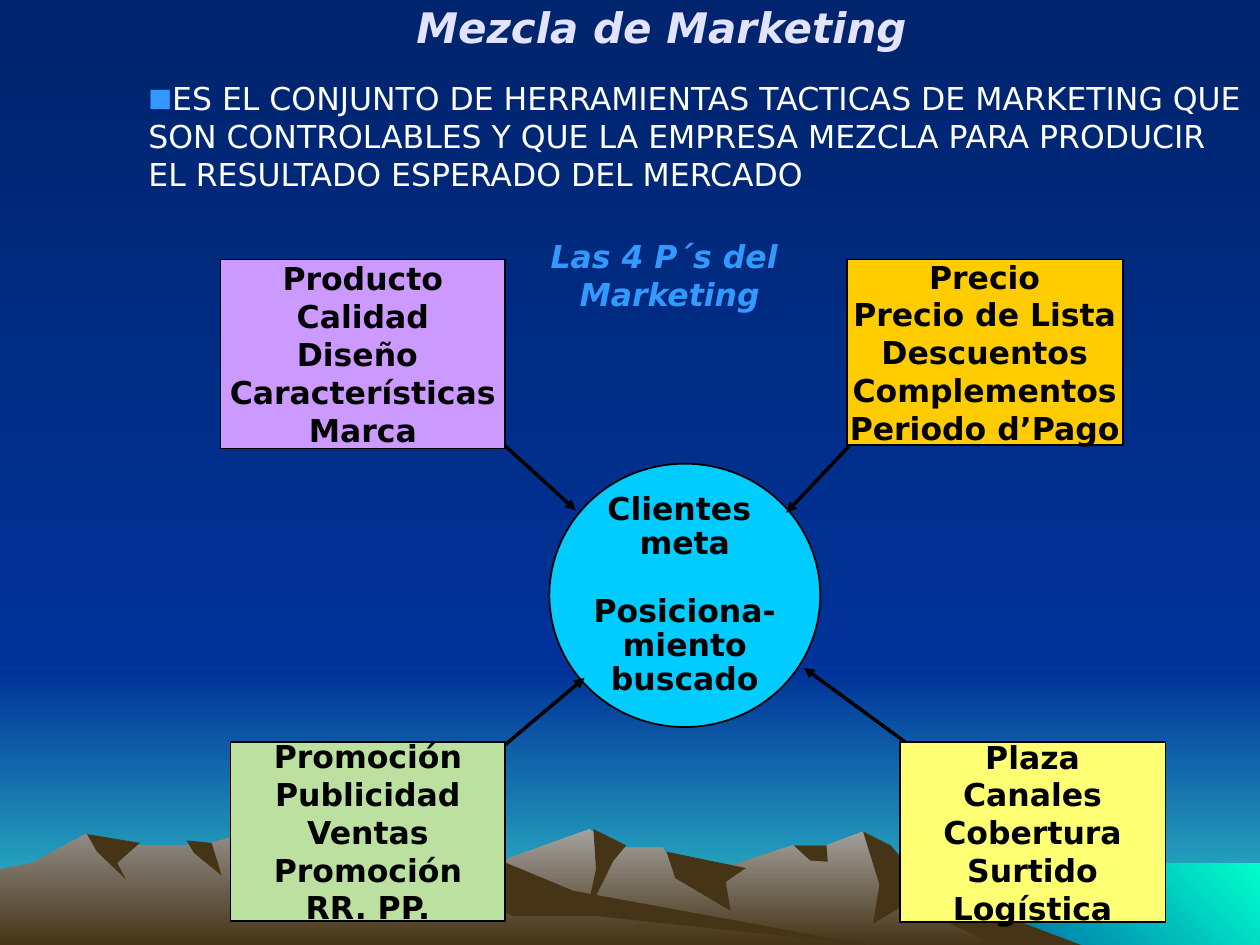
from pptx import Presentation
from pptx.dml.color import RGBColor
from pptx.enum.shapes import MSO_CONNECTOR, MSO_SHAPE
from pptx.enum.text import MSO_ANCHOR, PP_ALIGN
from pptx.oxml.ns import qn
from pptx.util import Inches, Pt
from lxml.etree import SubElement

FONT = "DejaVu Sans"
COLORS = {
    "night": "00246D", "blue": "003399", "horizon": "33CCCC", "water": "00FFCC",
    "rock": "A5A29F", "far_rock": "938F8B", "shade": "463416",
    "title": "E3E3FF", "white": "FFFFFF", "accent": "3399FF", "black": "000000",
    "circle": "00CCFF", "product": "CC99FF", "price": "FFCC00",
    "promotion": "BBE0A0", "place": "FEFF72",
}

# Mountain outlines: fill colours, then points in inches
MOUNTAINS = [
    (("rock", "shade"),
     [(8.2, 7.5), (7.23, 6.98), (6.85, 6.6), (6.56, 6.71), (6.29, 6.71), (5.66, 6.92),
      (5.36, 6.9), (5.26, 6.73), (4.86, 6.73), (4.68, 6.58), (3.94, 6.85), (2.58, 7.5)]),
    (("shade",),
     [(6.85, 6.6), (6.98, 7.02), (6.93, 7.33), (7.2, 7.17), (7.9, 7.5), (8.58, 7.5),
      (7.34, 7.03), (7.07, 6.71)]),
    (("shade",),
     [(4.71, 6.58), (4.73, 6.9), (4.65, 7.27), (4.87, 6.83), (4.97, 6.71)]),
    (("shade",),
     [(5.29, 6.76), (5.36, 6.97), (5.8, 7.23), (5.76, 7), (5.92, 6.89)]),
    (("shade",), [(6.3, 6.71), (6.43, 6.83), (6.57, 6.84), (6.56, 6.71)]),
    (("far_rock", "shade"),
     [(6.9, 7.5), (4.32, 7.12), (3.54, 6.65), (2.6, 6.76), (2.08, 6.58), (1.6, 6.71),
      (0.94, 6.71), (0.68, 6.62), (0.26, 6.85), (0, 6.9), (0, 7.5)]),
    (("shade",),
     [(3.54, 6.65), (3.74, 7.12), (4.07, 7.27), (4.72, 7.27), (6.9, 7.5), (4.55, 7.07)]),
    (("shade",), [(1.48, 6.67), (1.68, 6.69), (1.76, 6.95), (1.54, 6.77)]),
    (("shade",),
     [(0.69, 6.62), (1.11, 6.69), (0.93, 6.85), (1, 6.98), (0.77, 6.76)]),
]

# Box colour, position and size, lines of text
BOXES = [
    ("product", (1.75, 2.06, 2.26, 1.5),
     ["Producto", "Calidad", "Diseño ", "Características", "Marca"]),
    ("price", (6.72, 2.06, 2.19, 1.47),
     ["Precio", "Precio de Lista", "Descuentos", "Complementos", "Periodo d’Pago"]),
    ("promotion", (1.83, 5.89, 2.18, 1.42),
     ["Promoción", "Publicidad", "Ventas", "Promoción", "RR. PP."]),
    ("place", (7.14, 5.89, 2.11, 1.43),
     ["Plaza", "Canales", "Cobertura", "Surtido", "Logística"]),
]
ARROWS = [(7.39, 6.04, 6.38, 5.3), (4.01, 5.91, 4.64, 5.38),
          (6.74, 3.54, 6.24, 4.07), (4.01, 3.54, 4.57, 4.05)]


def color(name):
    return RGBColor.from_string(COLORS[name])


def paint(fill, names, angle=270):
    """Fill with one colour, or with a gradient between two."""
    if len(names) == 1:
        fill.solid()
        fill.fore_color.rgb = color(names[0])
        return
    fill.gradient()
    fill.gradient_angle = angle
    for position, (stop, name) in enumerate(zip(fill.gradient_stops, names)):
        stop.position = position
        stop.color.rgb = color(name)


def write(frame, lines, size=18, ink="black", bold=True, italic=False, wrap=False,
          align=PP_ALIGN.CENTER, anchor=MSO_ANCHOR.MIDDLE, spacing=None):
    frame.word_wrap = wrap
    frame.vertical_anchor = anchor
    for index, line in enumerate(lines):
        para = frame.paragraphs[0] if index == 0 else frame.add_paragraph()
        para.alignment = align
        para.line_spacing = spacing
        span = para.add_run()
        span.text = line
        span.font.name, span.font.size = FONT, Pt(size)
        span.font.bold, span.font.italic = bold, italic
        span.font.color.rgb = color(ink)
    return frame


class SlideBuilder:
    def __init__(self, page):
        self.page = page
        self.shapes = page.shapes

    def finish(self, shape, names, angle=270, outlined=False):
        shape.shadow.inherit = False
        paint(shape.fill, names, angle)
        if outlined:
            shape.line.color.rgb = color("black")
            shape.line.width = Pt(1)
        else:
            shape.line.fill.background()
        return shape

    def preset(self, kind, place, *names, **style):
        shape = self.shapes.add_shape(kind, *map(Inches, place))
        return self.finish(shape, names, **style)

    def outline(self, names, points):
        points = [(Inches(x), Inches(y)) for x, y in points]
        builder = self.shapes.build_freeform(*points[0])
        builder.add_line_segments(points[1:], close=True)
        return self.finish(builder.convert_to_shape(), names)

    def panel(self, kind, place, name, lines, **style):
        shape = self.preset(kind, place, name, outlined=True)
        return write(shape.text_frame, lines, **style)

    def text(self, place, lines, **style):
        box = self.shapes.add_textbox(*map(Inches, place))
        return write(box.text_frame, lines, **style)

    def bullet(self, para, symbol, ink):
        properties = para._p.get_or_add_pPr()
        properties.set("marL", "0")
        properties.set("indent", "0")
        tint = SubElement(properties, qn("a:buClr"))
        SubElement(tint, qn("a:srgbClr"), val=COLORS[ink])
        SubElement(properties, qn("a:buSzPct"), val="80000")
        SubElement(properties, qn("a:buFont"), typeface=FONT)
        SubElement(properties, qn("a:buChar"), char=symbol)

    def arrow(self, ends):
        arrow = self.shapes.add_connector(MSO_CONNECTOR.STRAIGHT, *map(Inches, ends))
        arrow.line.color.rgb = color("black")
        arrow.line.width = Pt(2)
        SubElement(arrow.line._get_or_add_ln(), qn("a:tailEnd"), type="triangle")
        SubElement(arrow._element.spPr, qn("a:effectLst"))


def main():
    deck = Presentation()
    deck.slide_width, deck.slide_height = Inches(10), Inches(7.5)
    slide = SlideBuilder(deck.slides.add_slide(deck.slide_layouts[6]))

    # Sky, water and mountains
    paint(slide.page.background.fill, ("night", "blue"))
    slide.preset(MSO_SHAPE.RECTANGLE, (0, 5.33, 10, 2.17), "blue", "horizon")
    slide.preset(MSO_SHAPE.RECTANGLE, (0, 0, 10, 5.33), "night", "blue")
    slide.preset(MSO_SHAPE.RECTANGLE, (6.83, 6.85, 3.17, 0.65), "blue", "water", angle=45)
    for names, points in MOUNTAINS:
        slide.outline(names, points)

    # Title, definition and subtitle
    slide.text((1, -0.25, 8.5, 0.92), ["Mezcla de Marketing"],
               size=24, ink="title", italic=True, wrap=True)
    definition = slide.text(
        (1.08, 0.58, 8.92, 1),
        ["ES EL CONJUNTO DE HERRAMIENTAS TACTICAS DE MARKETING QUE SON CONTROLABLES "
         "Y QUE LA EMPRESA MEZCLA PARA PRODUCIR EL RESULTADO ESPERADO DEL MERCADO"],
        ink="white", bold=False, wrap=True, align=PP_ALIGN.LEFT, anchor=MSO_ANCHOR.TOP)
    slide.bullet(definition.paragraphs[0], "■", "accent")
    slide.text((4.25, 1.83, 2.13, 0.7), ["Las 4 P´s del ", "Marketing"],
               ink="accent", italic=True, anchor=MSO_ANCHOR.TOP)

    # Target customers, with a gap before the positioning
    target = slide.panel(
        MSO_SHAPE.OVAL, (4.36, 3.68, 2.15, 2.09), "circle",
        ["Clientes ", "meta", "Posiciona-", "miento", "buscado"], spacing=0.9)
    target.paragraphs[2].space_before = Pt(19)

    # Arrows under the four boxes of the mix
    for ends in ARROWS:
        slide.arrow(ends)
    for name, place, lines in BOXES:
        slide.panel(MSO_SHAPE.RECTANGLE, place, name, lines)

    deck.save("out.pptx")


if __name__ == "__main__":
    main()
